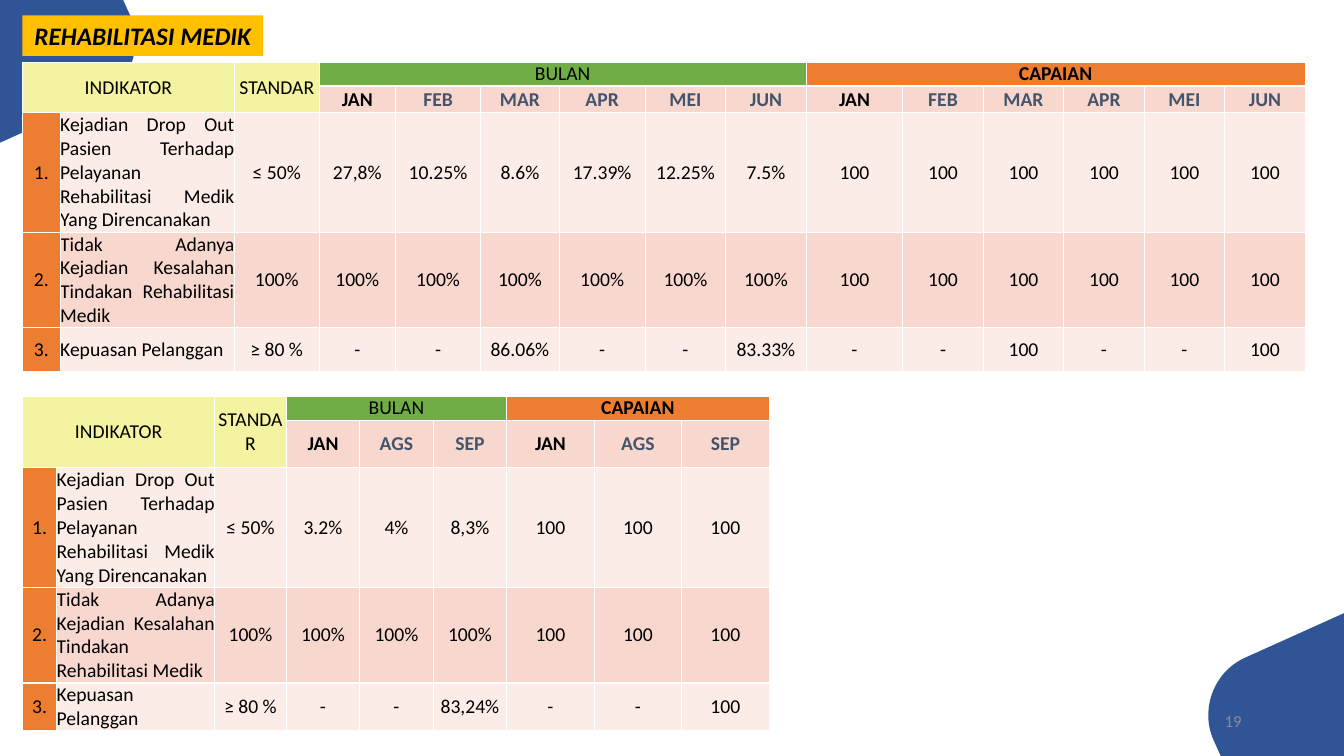
from pptx import Presentation
from pptx.dml.color import RGBColor
from pptx.enum.text import MSO_ANCHOR, MSO_AUTO_SIZE, PP_ALIGN
from pptx.oxml import parse_xml
from pptx.oxml.ns import nsdecls
from pptx.util import Pt

BLACK, SLATE = "000000", "44546A"
ORANGE, GREEN, LEMON = "ED7D31", "70AD47", "F3F3A1"
BANDS = ["FCECE8", "F8D7CE"]
TASKS = [
    ("Kejadian Drop Out Pasien Terhadap Pelayanan Rehabilitasi Medik Yang Direncanakan", "≤ 50%"),
    ("Tidak Adanya Kejadian Kesalahan Tindakan Rehabilitasi Medik", "100%"),
    ("Kepuasan Pelanggan", "≥ 80 %"),
]


def paint(fill, color):
    fill.solid()
    fill.fore_color.rgb = RGBColor.from_string(color)


def write(frame, text, size=14, color=BLACK, bold=False, italic=False, align=PP_ALIGN.CENTER):
    frame.text = text
    frame.vertical_anchor = MSO_ANCHOR.MIDDLE
    line = frame.paragraphs[0]
    line.alignment = align
    font = line.runs[0].font
    font.name, font.size, font.bold, font.italic = "Calibri", Pt(size), bold, italic
    font.color.rgb = RGBColor.from_string(color)


def add_corner(slide, left, top, sign):
    ends = [(93, 11), (103, 33), (93, 60), (71, 70)]
    curve = []
    for step in range(1, 25):
        t = step / 24
        parts = [(1 - t) ** 3, 3 * t * (1 - t) ** 2, 3 * t * t * (1 - t), t ** 3]
        curve.append(tuple(sum(p * end[axis] for p, end in zip(parts, ends)) for axis in (0, 1)))
    edge = [(88, 0), ends[0], *curve, (0, 102)]
    pen = slide.shapes.build_freeform(Pt(left), Pt(top), scale=1.0)
    pen.add_line_segments([(Pt(left + sign * x), Pt(top + sign * y)) for x, y in edge])
    shape = pen.convert_to_shape()
    shape.shadow.inherit = False
    paint(shape.fill, "2F5597")
    shape.line.fill.background()


def add_title(slide, left, top, width, height):
    title = slide.shapes.title
    title.left, title.top, title.width, title.height = map(Pt, (left, top, width, height))
    title.element.spPr.append(parse_xml(
        f'<a:prstGeom {nsdecls("a")} prst="round2DiagRect"><a:avLst/></a:prstGeom>'))
    paint(title.fill, "FFC000")
    write(title.text_frame, "REHABILITASI MEDIK", 18, bold=True, italic=True)
    title.text_frame.auto_size = MSO_AUTO_SIZE.NONE
    slide.shapes.element.append(title.element)


def add_number(slide, left, top, width, height):
    box = slide.shapes.add_textbox(*map(Pt, (left, top, width, height)))
    box.text_frame.word_wrap = True
    write(box.text_frame, "19", 12, "8C8C8C", align=PP_ALIGN.RIGHT)


def add_scores(slide, left, top, widths, heights, months, values):
    frame = slide.shapes.add_table(
        len(heights), len(widths), Pt(left), Pt(top), Pt(sum(widths)), Pt(sum(heights)))
    table = frame.table
    for column, width in zip(table.columns, widths):
        column.width = Pt(width)
    for row, height in zip(table.rows, heights):
        row.height = Pt(height)

    def put(row, col, text, fill, **style):
        cell = table.cell(row, col)
        cell.margin_left = cell.margin_right = cell.margin_top = cell.margin_bottom = 0
        paint(cell.fill, fill)
        write(cell.text_frame, text, **style)
        cell.vertical_anchor = MSO_ANCHOR.MIDDLE

    count = len(months)
    split = 3 + count
    heads = [
        (0, 1, 1, "INDIKATOR", LEMON),
        (2, 2, 1, "STANDAR", LEMON),
        (3, split - 1, 0, "BULAN", GREEN),
        (split, split + count - 1, 0, "CAPAIAN", ORANGE),
    ]
    for first, last, low, text, fill in heads:
        table.cell(0, first).merge(table.cell(low, last))
        put(0, first, text, fill, bold=text == "CAPAIAN")
    for col, month in enumerate(months * 2, 3):
        put(1, col, month, BANDS[1], bold=True, color=BLACK if month == "JAN" else SLATE)
    for index, ((task, goal), scores) in enumerate(zip(TASKS, values)):
        row, band = index + 2, BANDS[index % 2]
        put(row, 0, f"{index + 1}.", ORANGE)
        put(row, 1, task, band, align=PP_ALIGN.JUSTIFY)
        for col, text in enumerate([goal, *scores], 2):
            put(row, col, text, band)


def main():
    deck = Presentation()
    deck.slide_width, deck.slide_height = Pt(960), Pt(540)
    slide = deck.slides.add_slide(deck.slide_layouts[5])
    add_corner(slide, 960, 540, -1)
    add_corner(slide, 0, 0, 1)
    add_number(slide, 678, 500.5, 216, 29)
    add_scores(
        slide, 16, 44.5,
        [27, 124.5, 60.5, 54.5, 61, 56, 61.5, 57.5, 57.5, 69] + [57.5] * 5,
        [17, 19, 85.5, 68, 31.5],
        ["JAN", "FEB", "MAR", "APR", "MEI", "JUN"],
        [
            ["27,8%", "10.25%", "8.6%", "17.39%", "12.25%", "7.5%"] + ["100"] * 6,
            ["100%"] * 6 + ["100"] * 6,
            ["-", "-", "86.06%", "-", "-", "83.33%"] + ["-", "-", "100"] * 2,
        ],
    )
    add_title(slide, 16, 11, 172, 29)
    add_scores(
        slide, 16, 283,
        [24.5, 113, 51] + [52.5] * 3 + [62.5] * 3,
        [17, 34, 85.5, 68, 33.5],
        ["JAN", "AGS", "SEP"],
        [
            ["3.2%", "4%", "8,3%"] + ["100"] * 3,
            ["100%"] * 3 + ["100"] * 3,
            ["-", "-", "83,24%", "-", "-", "100"],
        ],
    )
    deck.save("out.pptx")


if __name__ == "__main__":
    main()
